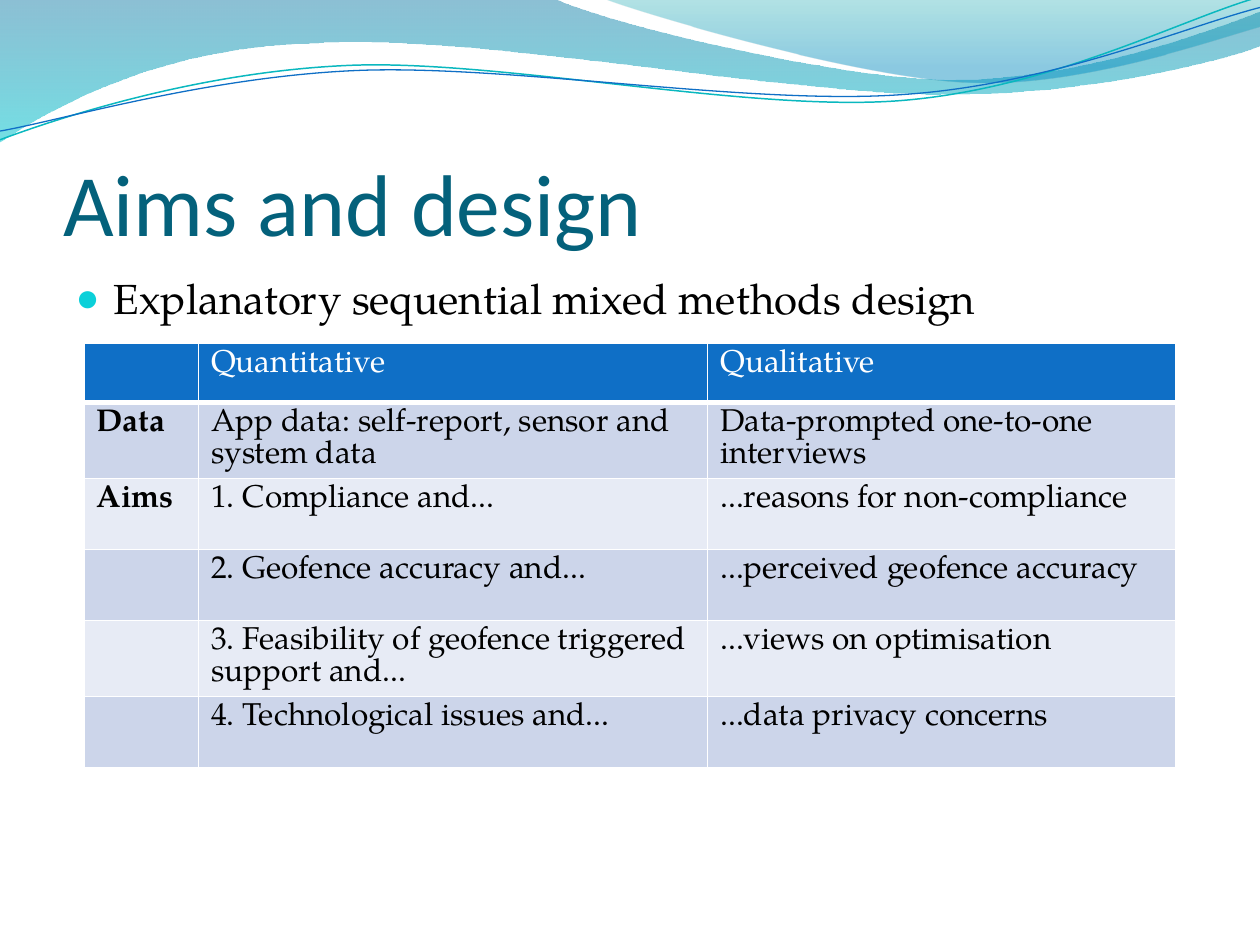
import math

import pptx
import pptx.dml.color
import pptx.enum.text
import pptx.oxml
import pptx.oxml.ns
import pptx.util
from dataclasses import dataclass

Pt = pptx.util.Pt
qn = pptx.oxml.ns.qn
NS = pptx.oxml.ns.nsdecls("a")


@dataclass(frozen=True)
class Theme:
    title_font: str = "Calibri"
    body_font: str = "TeX Gyre Pagella"
    title_size: float = 50
    body_size: float = 24
    table_size: float = 18
    title: str = "04617B"
    text: str = "000000"
    white: str = "FFFFFF"
    bullet: str = "0BD0D9"
    header: str = "0F6FC6"
    bands: tuple = ("CCD5EA", "E7EBF5")
    teal_line: str = "0AB8BF"
    blue_line: str = "0F6FC6"
    # gradient stops: position %, colour, opacity %
    wide_wave: tuple = ((0, "0074A1", 45), (100, "00C6CF", 55))
    right_wave: tuple = ((0, "00A1A9", 30), (80, "008BBF", 45))


THEME = Theme()
CURVE_TILT = -2.7

# Outlines: a start point, then line ends (2 numbers) or Bezier curves (6 numbers)
WIDE_WAVE = [
    (0, 0), (316.8, -0.7),
    (342.7, 12.2, 478.1, 45.4, 545.8, 45.4), (614.2, 45.4, 689.8, 18.7, 720, 6.5),
    (720.7, 25.9),
    (707.8, 31.7, 626.4, 54.7, 537.1, 54), (447.8, 54, 275, 20.2, 185, 24.5),
    (92.9, 25.9, 33.1, 59.8, -0.7, 81.4),
]
RIGHT_WAVE = [
    (344.9, -0.7),
    (366.5, 7.9, 491, 44.6, 553.7, 46.8), (616.3, 49.7, 691.9, 23, 720, 15.1),
    (720, 0),
]
TEAL_CURVE = [
    (0, 79.9),
    (34.6, 67, 113.8, 41, 199.4, 37.4), (284.4, 33.8, 427, 64.1, 513.4, 57.6),
    (599.8, 51.1, 675.4, 10.8, 718.6, -1.4),
]
BLUE_CURVE = [
    (0, 74.9),
    (33.8, 69.1, 118.1, 43.9, 203.8, 40.3), (290.2, 36.7, 429.8, 60.5, 516.2, 54),
    (601.9, 48.2, 677.5, 15.1, 720, 4.3),
]

ROWS = [
    ("", "Quantitative", "Qualitative"),
    ("Data", "App data: self-report, sensor and system data",
     "Data-prompted one-to-one interviews"),
    ("Aims", "1. Compliance and...", "...reasons for non-compliance"),
    ("", "2. Geofence accuracy and...", "...perceived geofence accuracy"),
    ("", "3. Feasibility of geofence triggered support and...", "...views on optimisation"),
    ("", "4. Technological issues and...", "...data privacy concerns"),
]


def rgb(value):
    return pptx.dml.color.RGBColor.from_string(value)


def add_run(p, text, font, size, color, bold=False):
    r = p.add_run()
    r.text = text
    r.font.name, r.font.size, r.font.bold = font, Pt(size), bold
    r.font.color.rgb = rgb(color)


def place(sp, box):
    sp.left, sp.top, sp.width, sp.height = (Pt(v) for v in box)


def add_outline(slide, box, outline, closed, tilt=0):
    """Draw an outline of lines and Bezier curves as a shape turned by tilt degrees."""
    left, top, width, _ = box
    cos, sin = math.cos(math.radians(tilt)), math.sin(math.radians(tilt))
    cx, cy = width / 2, 41.4

    def untilt(x, y):
        dx, dy = x - cx, y - cy
        return (Pt(left + cx + dx * cos + dy * sin), Pt(top + cy - dx * sin + dy * cos))

    parts = [[untilt(*part[i:i + 2]) for i in range(0, len(part), 2)] for part in outline]
    builder = slide.shapes.build_freeform(*parts[0][0])
    builder.add_line_segments([part[-1] for part in parts[1:]], close=closed)
    sp = builder.convert_to_shape()
    for line, part in zip(list(sp.element.iter(qn("a:lnTo"))), parts[1:]):
        if len(part) == 3:
            pts = "".join(f'<a:pt x="{x - sp.left}" y="{y - sp.top}"/>' for x, y in part)
            curve = pptx.oxml.parse_xml(f"<a:cubicBezTo {NS}>{pts}</a:cubicBezTo>")
            line.getparent().replace(line, curve)
    sp.rotation = tilt
    sp.shadow.inherit = False
    return sp


def fill_gradient(sp, stops):
    """Fill from top to bottom with half-transparent stops."""
    gs = "".join(
        f'<a:gs pos="{pos * 1000}"><a:srgbClr val="{color}">'
        f'<a:alpha val="{alpha * 1000}"/></a:srgbClr></a:gs>'
        for pos, color, alpha in stops)
    grad = pptx.oxml.parse_xml(
        f'<a:gradFill {NS} rotWithShape="1"><a:gsLst>{gs}</a:gsLst>'
        '<a:lin ang="5400000" scaled="0"/></a:gradFill>')
    sp.element.spPr.find(qn("a:custGeom")).addnext(grad)


def add_waves(slide, box):
    """Draw the wave band behind everything else."""
    waves = []
    for outline, stops in ((WIDE_WAVE, THEME.wide_wave), (RIGHT_WAVE, THEME.right_wave)):
        sp = add_outline(slide, box, outline, closed=True)
        fill_gradient(sp, stops)
        sp.line.fill.background()
        waves.append(sp)
    for outline, color, width in ((TEAL_CURVE, THEME.teal_line, 0.85),
                                  (BLUE_CURVE, THEME.blue_line, 0.75)):
        sp = add_outline(slide, box, outline, closed=False, tilt=CURVE_TILT)
        sp.fill.background()
        sp.line.color.rgb, sp.line.width = rgb(color), Pt(width)
        waves.append(sp)
    tree = slide.shapes.element
    for i, sp in enumerate(waves):
        tree.insert(2 + i, sp.element)


def set_title(slide, box, text):
    sp = slide.shapes.title
    place(sp, box)
    tf = sp.text_frame
    tf.auto_size = pptx.enum.text.MSO_AUTO_SIZE.NONE
    tf.vertical_anchor = pptx.enum.text.MSO_ANCHOR.BOTTOM
    tf.margin_left = tf.margin_right = tf.margin_bottom = 0
    p = tf.paragraphs[0]
    p.alignment = pptx.enum.text.PP_ALIGN.LEFT
    add_run(p, text, THEME.title_font, THEME.title_size, THEME.title)


def set_body(slide, box, text):
    sp = slide.placeholders[1]
    place(sp, box)
    tf = sp.text_frame
    tf.auto_size = pptx.enum.text.MSO_AUTO_SIZE.NONE
    p = tf.paragraphs[0]
    p.space_before = Pt(0.2 * THEME.body_size)
    add_run(p, text, THEME.body_font, THEME.body_size, THEME.text)
    pPr = p._p.get_or_add_pPr()
    pPr.set("marL", str(Pt(21.6)))
    pPr.set("indent", str(Pt(-21.6)))
    for xml in (f'<a:buClr {NS}><a:srgbClr val="{THEME.bullet}"/></a:buClr>',
                f'<a:buSzPct {NS} val="95000"/>',
                f'<a:buChar {NS} char="●"/>'):
        pPr.append(pptx.oxml.parse_xml(xml))


def set_borders(cell, color, bottom):
    tcPr = cell._tc.get_or_add_tcPr()
    for i, (side, width) in enumerate(zip("LRTB", (1, 1, 1, bottom))):
        tcPr.insert(i, pptx.oxml.parse_xml(
            f'<a:ln{side} {NS} w="{Pt(width)}"><a:solidFill><a:srgbClr val="{color}"/>'
            f'</a:solidFill></a:ln{side}>'))


def add_design_table(slide, box, col_widths, row_heights):
    table = slide.shapes.add_table(
        len(ROWS), len(col_widths), *(Pt(v) for v in box)).table
    for col, width in zip(table.columns, col_widths):
        col.width = Pt(width)
    for i, (row, texts) in enumerate(zip(table.rows, ROWS)):
        row.height = Pt(row_heights[i])
        fill = THEME.bands[(i - 1) % 2] if i else THEME.header
        color = THEME.text if i else THEME.white
        for j, (cell, text) in enumerate(zip(row.cells, texts)):
            cell.fill.solid()
            cell.fill.fore_color.rgb = rgb(fill)
            set_borders(cell, THEME.white, bottom=1 if i else 3)
            if text:
                add_run(cell.text_frame.paragraphs[0], text, THEME.body_font,
                        THEME.table_size, color, bold=j == 0)


def main():
    prs = pptx.Presentation()
    prs.slide_width, prs.slide_height = Pt(720), Pt(540)
    slide = prs.slides.add_slide(prs.slide_layouts[1])
    add_waves(slide, (0, 0, 720, 82))
    set_title(slide, (36, 55.4, 648, 90), "Aims and design")
    set_body(slide, (36, 152.3, 648, 345.6), "Explanatory sequential mixed methods design")
    add_design_table(slide, (48.1, 196.3, 623.5, 236.3),
                     (65.4, 290.9, 267.2), [33.8] + [40.5] * 5)
    prs.save("out.pptx")


if __name__ == "__main__":
    main()
